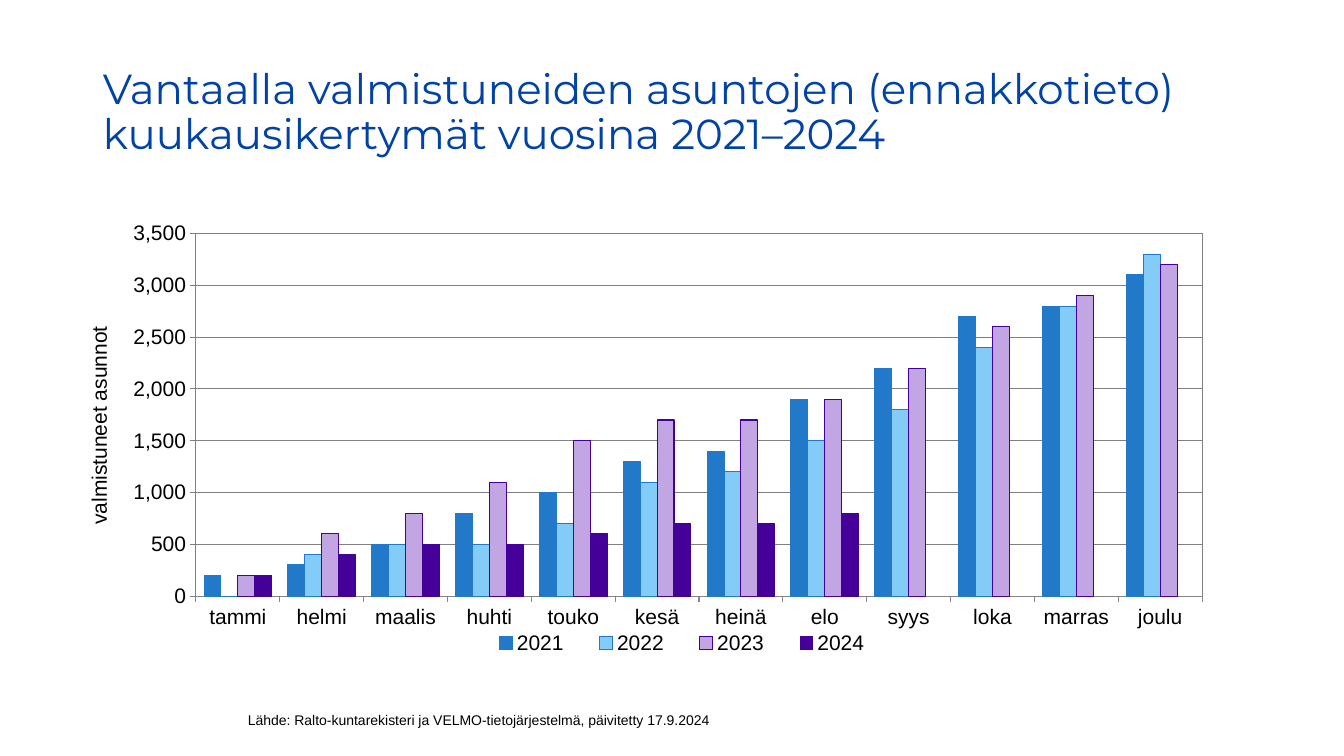
from lxml import etree
from pptx import Presentation
from pptx.chart.data import CategoryChartData
from pptx.dml.color import RGBColor
from pptx.enum.chart import XL_CHART_TYPE as ChartType
from pptx.enum.chart import XL_LEGEND_POSITION as LegendPosition
from pptx.enum.chart import XL_TICK_MARK as TickMark
from pptx.enum.text import MSO_ANCHOR as Anchor
from pptx.oxml import parse_xml
from pptx.oxml.ns import nsdecls, qn
from pptx.util import Inches, Pt

TITLE = "Vantaalla valmistuneiden asuntojen (ennakkotieto) kuukausikertymät vuosina 2021–2024"
SOURCE = "Lähde: Ralto-kuntarekisteri ja VELMO-tietojärjestelmä, päivitetty 17.9.2024"
AXIS_TITLE = "valmistuneet asunnot"
MONTHS = ["tammi", "helmi", "maalis", "huhti", "touko", "kesä",
          "heinä", "elo", "syys", "loka", "marras", "joulu"]
COLORS = {"title": "0042A6", "text": "000000", "axis": "868686", "grid": "808080",
          "blue": "2278C9", "sky": "84CCF8", "lilac": "C2A6E3", "purple": "450099"}
# Year, fill, outline, cumulative completed dwellings by month
YEARS = [
    ("2021", "blue", "blue",
     [200, 300, 500, 800, 1000, 1300, 1400, 1900, 2200, 2700, 2800, 3100]),
    ("2022", "sky", "blue",
     [0, 400, 500, 500, 700, 1100, 1200, 1500, 1800, 2400, 2800, 3300]),
    ("2023", "lilac", "purple",
     [200, 600, 800, 1100, 1500, 1700, 1700, 1900, 2200, 2600, 2900, 3200]),
    ("2024", "purple", "purple",
     [200, 400, 500, 500, 600, 700, 700, 800] + [None] * 4),
]
# Left, top, width, height in inches
TITLE_BOX = (0.92, 0.58, 11.07, 1.09)
CHART_BOX = (0.81, 2.14, 11.34, 4.44)
SOURCE_BOX = (2.36, 7.01, 9.16, 0.4)
# Left, top, width, height as shares of the chart
PLOT_SHARE = (0.1, 0.04, 0.88, 0.81)
LEGEND_SHARE = (0.34, 0.92, 0.37, 0.07)


def color(name):
    return RGBColor.from_string(COLORS[name])


def set_font(font, name, size, color_name):
    for key, value in {"name": name, "size": Pt(size), "bold": False}.items():
        setattr(font, key, value)
    font.color.rgb = color(color_name)


def set_line(line, color_name):
    line.color.rgb = color(color_name)
    line.width = Pt(0.75)


def place(shape, box):
    for key, value in zip(("left", "top", "width", "height"), box):
        setattr(shape, key, Inches(value))


def manual_layout(element, after, shares, inner=False):
    """Fix a chart part at the given shares, with the layout put behind one child."""
    for old in element.findall(qn("c:layout")):
        element.remove(old)
    layout = parse_xml(f'<c:layout {nsdecls("c")}><c:manualLayout/></c:layout>')
    settings = [("layoutTarget", "inner")] if inner else []
    settings += [("xMode", "edge"), ("yMode", "edge")]
    settings += zip("xywh", map(str, shares))
    for tag, value in settings:
        etree.SubElement(layout[0], qn(f"c:{tag}")).set("val", value)
    if after:
        element.find(qn(after)).addnext(layout)
    else:
        element.insert(0, layout)


def add_title(page):
    title = page.shapes.title
    place(title, TITLE_BOX)
    frame = title.text_frame
    frame.text = TITLE
    frame.word_wrap = True
    frame.vertical_anchor = Anchor.MIDDLE
    para = frame.paragraphs[0]
    para.line_spacing = 0.9
    para.alignment = 1
    set_font(para.runs[0].font, "Montserrat", 30, "title")


def add_source(page):
    box = page.shapes.add_textbox(*map(Inches, SOURCE_BOX))
    box.text_frame.word_wrap = True
    box.text_frame.text = SOURCE
    set_font(box.text_frame.paragraphs[0].runs[0].font, "Arial", 10, "text")


def add_month_chart(page):
    data = CategoryChartData(number_format="#,##0")
    data.categories = MONTHS
    for year, _, _, values in YEARS:
        data.add_series(year, values)
    chart = page.shapes.add_chart(
        ChartType.COLUMN_CLUSTERED, *map(Inches, CHART_BOX), data).chart
    chart.has_title = False
    set_font(chart.font, "Arial", 15, "text")

    plot = chart.plots[0]
    for key, value in {"gap_width": 96, "overlap": 0, "vary_by_categories": False}.items():
        setattr(plot, key, value)
    for series, (_, fill, outline, _) in zip(plot.series, YEARS):
        series.format.fill.solid()
        series.format.fill.fore_color.rgb = color(fill)
        set_line(series.format.line, outline)

    months, dwellings = chart.category_axis, chart.value_axis
    for axis, line in ((months, "axis"), (dwellings, "grid")):
        axis.major_tick_mark = TickMark.OUTSIDE
        axis.minor_tick_mark = TickMark.NONE
        set_line(axis.format.line, line)
    scale = {"minimum_scale": 0, "maximum_scale": 3500, "major_unit": 500,
             "has_major_gridlines": True}
    for key, value in scale.items():
        setattr(dwellings, key, value)
    set_line(dwellings.major_gridlines.format.line, "grid")
    dwellings.tick_labels.number_format = "#,##0"
    dwellings.tick_labels.number_format_is_linked = False
    dwellings.axis_title.text_frame.text = AXIS_TITLE
    label = dwellings.axis_title.text_frame.paragraphs[0].runs[0]
    set_font(label.font, "Arial", 15, "text")

    chart.has_legend = True
    chart.legend.position = LegendPosition.BOTTOM
    chart.legend.include_in_layout = False
    set_font(chart.legend.font, "Arial", 15, "text")
    manual_layout(chart.legend._element, "c:legendPos", LEGEND_SHARE)

    area = plot._element.getparent()
    manual_layout(area, None, PLOT_SHARE, inner=True)
    area.append(parse_xml(
        f'<c:spPr {nsdecls("c", "a")}><a:noFill/><a:ln w="{Pt(0.75)}"><a:solidFill>'
        f'<a:srgbClr val="{COLORS["grid"]}"/></a:solidFill></a:ln></c:spPr>'))


def main():
    deck = Presentation()
    deck.slide_width, deck.slide_height = Inches(13.33), Inches(7.5)
    page = deck.slides.add_slide(deck.slide_layouts.get_by_name("Title Only"))
    add_title(page)
    add_source(page)
    add_month_chart(page)
    deck.save("out.pptx")


if __name__ == "__main__":
    main()
